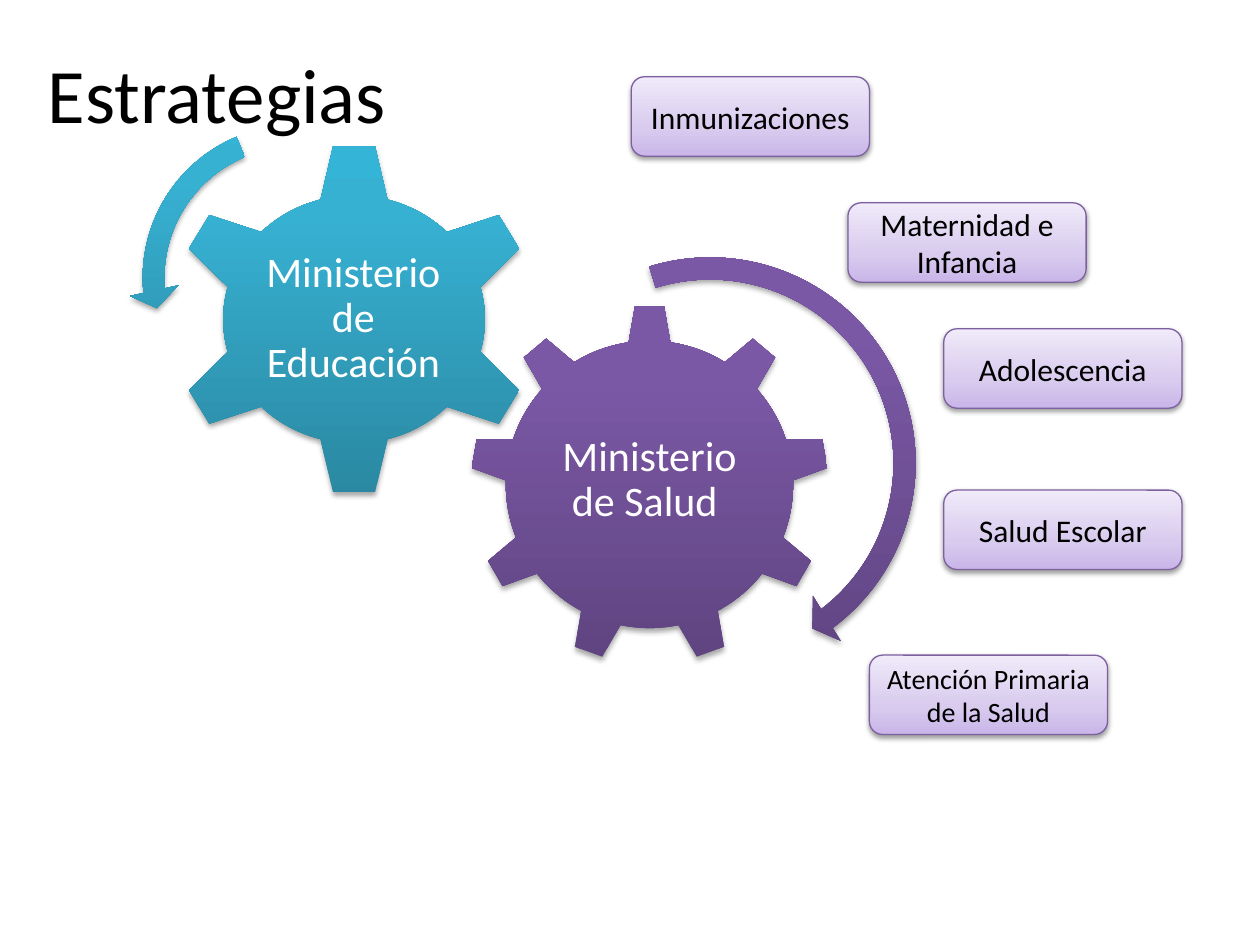
from copy import deepcopy
from dataclasses import dataclass

from lxml import etree
from pptx import Presentation
from pptx import util as u
from pptx.dml.color import RGBColor
from pptx.enum import shapes, text
from pptx.oxml.ns import qn

SHAPE = shapes.MSO_SHAPE


@dataclass(frozen=True)
class Theme:
    font: str = "Calibri"
    black: str = "000000"
    white: str = "FFFFFF"
    border: str = "7D60A0"
    # Gradient stops run from bottom to top: (position, colour)
    purple: tuple = ((0, "5F4480"), (0.8, "7B58A6"), (1, "7C57A8"))
    teal: tuple = ((0, "2A88A2"), (0.8, "37B1D2"), (1, "34B4D6"))
    lilac: tuple = ((0, "C9B5E8"), (0.35, "D8CBEE"), (1, "F0EAF9"))
    title_size: int = 44
    gear_size: int = 24
    box_size: int = 18
    small_size: int = 16


def write(sp, words, *, font, size, color, align=text.PP_ALIGN.CENTER,
          spacing=None, inset=None):
    tf = sp.text_frame
    tf.word_wrap = True
    tf.vertical_anchor = text.MSO_ANCHOR.MIDDLE
    if inset is not None:
        tf.margin_left = tf.margin_right = u.Inches(inset)
        tf.margin_top = tf.margin_bottom = u.Inches(inset)
    p = tf.paragraphs[0]
    p.alignment = align
    if spacing:
        p.line_spacing = spacing
    r = p.add_run()
    r.text = words
    r.font.name = font
    r.font.size = u.Pt(size)
    r.font.color.rgb = RGBColor.from_string(color)


def fill_gradient(sp, stops):
    sp.fill.gradient()
    sp.fill.gradient_angle = 90
    stop_list = sp._element.spPr.find(qn("a:gradFill")).find(qn("a:gsLst"))
    stop_list.insert(1, deepcopy(stop_list[0]))
    for stop, (position, color) in zip(sp.fill.gradient_stops, stops):
        stop.position = position
        stop.color.rgb = RGBColor.from_string(color)


def drop_shadow(sp, distance, opacity):
    """Cast a soft black shadow straight down; distance in points, opacity in percent."""
    sp.shadow.inherit = False
    effects = sp._element.spPr.find(qn("a:effectLst"))
    shadow = etree.SubElement(
        effects, qn("a:outerShdw"), blurRad=str(u.Pt(3.1)),
        dist=str(u.Pt(distance)), dir="5400000", rotWithShape="0")
    color = etree.SubElement(shadow, qn("a:srgbClr"), val="000000")
    etree.SubElement(color, qn("a:alpha"), val=str(opacity * 1000))


class SlideBuilder:
    def __init__(self, slide, theme):
        self.s = slide
        self.theme = theme

    def shape(self, kind, at, stops, shadow=(1.8, 35)):
        sp = self.s.shapes.add_shape(kind, *map(u.Inches, at))
        fill_gradient(sp, stops)
        sp.line.fill.background()
        drop_shadow(sp, *shadow)
        return sp

    def label(self, words, at, **style):
        sp = self.s.shapes.add_textbox(*map(u.Inches, at))
        write(sp, words, font=self.theme.font, **style)

    def gear(self, kind, at, stops, words, words_at):
        self.shape(kind, at, stops)
        self.label(words, words_at, size=self.theme.gear_size,
                   color=self.theme.white, spacing=0.9, inset=0.03)

    def arc_arrow(self, kind, at, stops, thickness, head_angle, end, start, head):
        """Draw a curved arrow; angles in degrees, the rest as shares of its size."""
        sp = self.shape(kind, at, stops)
        angles = [a * 0.6 for a in (head_angle, end, start)]
        for i, value in enumerate([thickness, *angles, head]):
            sp.adjustments[i] = value

    def box(self, words, left, top, size):
        sp = self.shape(SHAPE.ROUNDED_RECTANGLE, (left, top, 1.89, 0.63),
                        self.theme.lilac, shadow=(1.6, 38))
        sp.line.color.rgb = RGBColor.from_string(self.theme.border)
        sp.line.width = u.Pt(0.75)
        write(sp, words, font=self.theme.font, size=size, color=self.theme.black)


def main():
    theme = Theme()
    prs = Presentation()
    prs.slide_width, prs.slide_height = u.Inches(10), u.Inches(7.5)
    b = SlideBuilder(prs.slides.add_slide(prs.slide_layouts[6]), theme)

    b.gear(SHAPE.GEAR_9, (3.73, 2.42, 2.85, 2.85), theme.purple,
           "Ministerio de Salud ", (4.3, 3.08, 1.71, 1.47))
    b.gear(SHAPE.GEAR_6, (1.35, 1.13, 2.92, 2.81), theme.teal,
           "Ministerio de Educación ", (2.07, 1.84, 1.47, 1.38))

    b.arc_arrow(SHAPE.CIRCULAR_ARROW, (3.88, 1.92, 3.51, 3.51), theme.purple,
                0.05, 5.21, 53.04, 252.81, 0.06)
    b.arc_arrow(SHAPE.LEFT_CIRCULAR_ARROW, (1.02, 0.88, 2.65, 2.65), theme.teal,
                0.065, 7.17, 174.82, 247.3, 0.075)

    programs = [
        ("Maternidad e Infancia", 6.73, 1.61, theme.box_size),
        ("Adolescencia", 7.49, 2.61, theme.box_size),
        ("Salud Escolar", 7.49, 3.89, theme.box_size),
        ("Atención Primaria de la Salud", 6.9, 5.2, theme.small_size),
        ("Inmunizaciones", 5.01, 0.61, theme.box_size),
    ]
    for program in programs:
        b.box(*program)

    b.label("Estrategias", (0.28, 0.11, 9, 1.25), size=theme.title_size,
            color=theme.black, align=text.PP_ALIGN.LEFT)
    prs.save("out.pptx")


if __name__ == "__main__":
    main()
